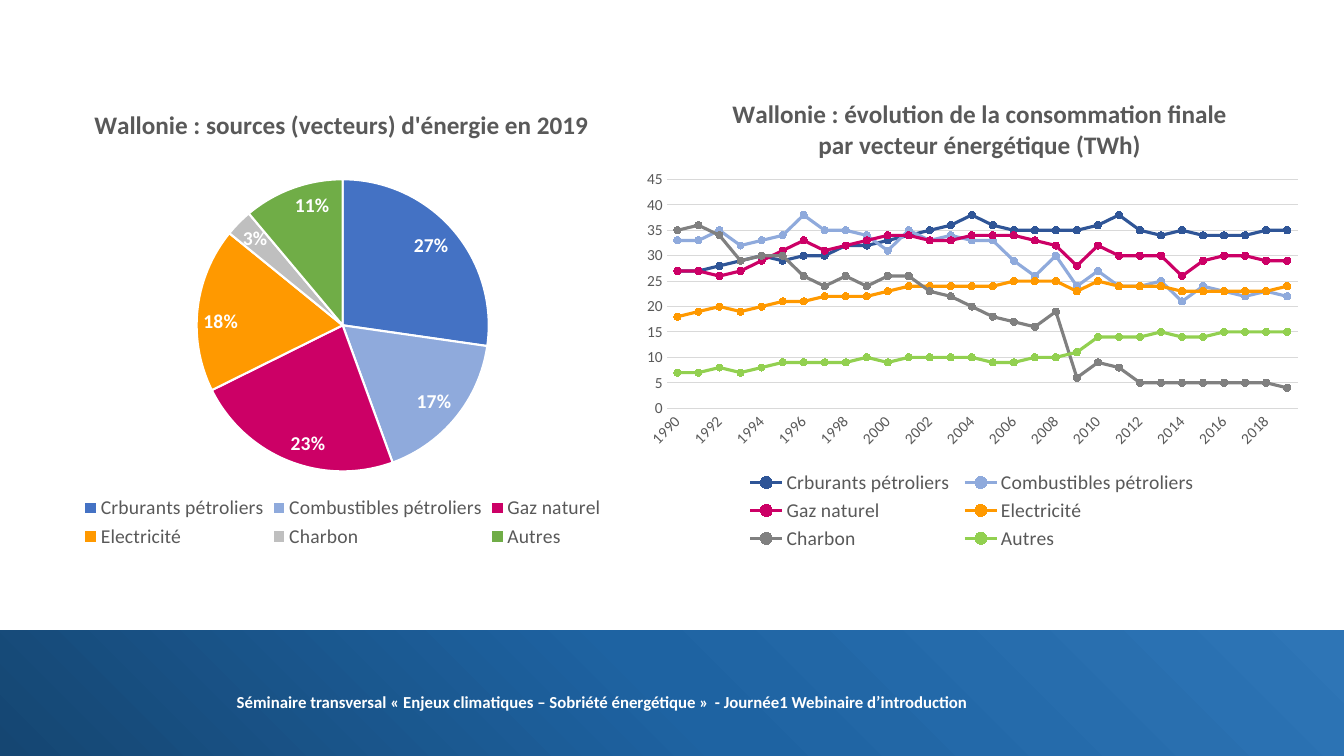
"""Build a slide on energy sources and final energy use in Wallonia."""
from copy import deepcopy
from dataclasses import dataclass
from typing import Any

from lxml.etree import SubElement as Sub, Element as Elem
from pptx import Presentation as Deck
from pptx.chart.data import CategoryChartData as Data
from pptx.dml.color import RGBColor as Rgb
from pptx.enum.chart import (XL_CHART_TYPE as Kind, XL_LABEL_POSITION as Spot,
                             XL_LEGEND_POSITION as Side, XL_MARKER_STYLE as Mark,
                             XL_TICK_MARK as Tick)
from pptx.enum.shapes import MSO_SHAPE as Form
from pptx.oxml.ns import qn
from pptx.util import Pt

Box = tuple[float, ...]


@dataclass(frozen=True)
class Theme:
    """Colours and type sizes of the slide."""
    font: str = "Calibri"
    black: str = "000000"
    white: str = "FFFFFF"
    grey: str = "595959"
    rule: str = "D9D9D9"
    band: tuple[str, ...] = ("154672", "1E63A2", "2E75B6")
    title: float = 18
    key: float = 14
    axis: float = 11
    base: float = 10
    foot: float = 12
    gap: float = 18


@dataclass(frozen=True)
class Source:
    """One energy source with its share, its colours and its yearly use."""
    name: str
    share: int
    slice: str
    line: str
    use: tuple[int, ...]


@dataclass(frozen=True)
class Panel:
    """One chart with its place and the layout of its parts."""
    kind: Any
    title: str
    box: Box
    head: Box
    plot: Box
    key: Box


THEME = Theme()
YEARS = [str(year) for year in range(1990, 2020)]
SOURCES = (
    Source("Crburants pétroliers", 27, "4472C4", "2F5597",
           (27, 27, 28, 29, 30, 29, 30, 30, 32, 32, 33, 34, 35, 36, 38,
            36, 35, 35, 35, 35, 36, 38, 35, 34, 35, 34, 34, 34, 35, 35)),
    Source("Combustibles pétroliers", 17, "8FAADC", "8FAADC",
           (33, 33, 35, 32, 33, 34, 38, 35, 35, 34, 31, 35, 33, 34, 33,
            33, 29, 26, 30, 24, 27, 24, 24, 25, 21, 24, 23, 22, 23, 22)),
    Source("Gaz naturel", 23, "CC0066", "CC0066",
           (27, 27, 26, 27, 29, 31, 33, 31, 32, 33, 34, 34, 33, 33, 34,
            34, 34, 33, 32, 28, 32, 30, 30, 30, 26, 29, 30, 30, 29, 29)),
    Source("Electricité", 18, "FF9900", "FF9900",
           (18, 19, 20, 19, 20, 21, 21, 22, 22, 22, 23, 24, 24, 24, 24,
            24, 25, 25, 25, 23, 25, 24, 24, 24, 23, 23, 23, 23, 23, 24)),
    Source("Charbon", 3, "BFBFBF", "808080",
           (35, 36, 34, 29, 30, 30, 26, 24, 26, 24, 26, 26, 23, 22, 20,
            18, 17, 16, 19, 6, 9, 8, 5, 5, 5, 5, 5, 5, 5, 4)),
    Source("Autres", 11, "70AD47", "92D050",
           (7, 7, 8, 7, 8, 9, 9, 9, 9, 10, 9, 10, 10, 10, 10,
            9, 9, 10, 10, 11, 14, 14, 14, 15, 14, 14, 15, 15, 15, 15)),
)
PIE = Panel(Kind.PIE, "Wallonie : sources (vecteurs) d'énergie en 2019",
            (-12.24, 56.16, 509, 339), (0.15, 0.05),
            (0.3, 0.21, 0.41, 0.62), (0.13, 0.87, 0.75, 0.13))
TREND = Panel(Kind.LINE_MARKERS,
              "Wallonie : évolution de la consommation finale par vecteur énergétique (TWh)",
              (452.16, 48.24, 484.5, 347.75), (0.14, 0.05),
              (0.05, 0.23, 0.93, 0.47), (0.16, 0.82, 0.68, 0.18))
FOOTER = (("Séminaire transversal « Enjeux climatiques – Sobriété énergétique »", THEME.foot),
          (" ", THEME.gap), ("- Journée1 Webinaire d’introduction", THEME.foot))


def style(item: Any, form: dict[str, Any]) -> None:
    """Set each attribute named in the format."""
    for name, value in form.items():
        setattr(item, name, value)


def write(font: Any, size: float, tint: str, bold: bool = False) -> None:
    """Give a font its face, size, weight and colour."""
    style(font, {"name": THEME.font, "size": Pt(size), "bold": bold})
    font.color.rgb = Rgb.from_string(tint)


def paint(fill: Any, tint: str) -> None:
    """Make a fill solid in one colour."""
    fill.solid()
    fill.fore_color.rgb = Rgb.from_string(tint)


def stroke(line: Any, tint: str, width: float) -> None:
    """Give a line its colour and width."""
    paint(line.fill, tint)
    line.width = Pt(width)


def place(part: Any, box: Box, inner: bool = False) -> None:
    """Fix a chart part at fractions of the chart area."""
    for old in part.findall(qn("c:layout")):
        part.remove(old)
    layout = Elem(qn("c:layout"))
    spot = Sub(layout, qn("c:manualLayout"))
    marks = [("layoutTarget", "inner")] if inner else []
    marks += [("xMode", "edge"), ("yMode", "edge")]
    marks += [(name, str(value)) for name, value in zip("xywh", box)]
    for name, value in marks:
        Sub(spot, qn("c:" + name)).set("val", value)
    over = part.find(qn("c:overlay"))
    if over is None:
        part.insert(0, layout)
    else:
        over.addprevious(layout)


def draw(slide: Any, panel: Panel, data: Data) -> Any:
    """Add a chart with its title and legend."""
    frame = slide.shapes.add_chart(panel.kind, *map(Pt, panel.box), data)
    chart = frame.chart
    style(chart, {"has_title": True, "has_legend": True})
    write(chart.font, THEME.base, THEME.black)
    text = chart.chart_title.text_frame
    text.text = panel.title
    write(text.paragraphs[0].runs[0].font, THEME.title, THEME.grey, True)
    style(chart.legend, {"position": Side.BOTTOM, "include_in_layout": False})
    write(chart.legend.font, THEME.key, THEME.grey)
    place(chart.chart_title._element, panel.head)
    place(chart.legend._element, panel.key)
    place(chart._chartSpace.find(".//" + qn("c:plotArea")), panel.plot, True)
    return chart


def add_pie(slide: Any) -> None:
    """Draw the shares of the sources."""
    data = Data()
    data.categories = [source.name for source in SOURCES]
    data.add_series("Series 1", [source.share for source in SOURCES])
    series = draw(slide, PIE, data).plots[0].series[0]
    for rank, source in enumerate(SOURCES):
        part = series.points[rank].format
        paint(part.fill, source.slice)
        stroke(part.line, THEME.white, 1.5)
    labels = series.data_labels
    style(labels, {"show_percentage": True, "show_value": False, "number_format": "0%",
                   "number_format_is_linked": False, "position": Spot.INSIDE_END})
    write(labels.font, THEME.key, THEME.white, True)


def add_trend(slide: Any) -> None:
    """Draw the yearly use of each source."""
    data = Data()
    data.categories = YEARS
    for source in SOURCES:
        data.add_series(source.name, source.use)
    chart = draw(slide, TREND, data)
    for source, series in zip(SOURCES, chart.plots[0].series):
        series.smooth = False
        stroke(series.format.line, source.line, 2.25)
        style(series.marker, {"style": Mark.CIRCLE, "size": 5})
        paint(series.marker.format.fill, source.line)
        stroke(series.marker.format.line, source.line, 0.75)
    years, scale = chart.category_axis, chart.value_axis
    for axis in (years, scale):
        style(axis, {"major_tick_mark": Tick.NONE, "minor_tick_mark": Tick.NONE})
        write(axis.tick_labels.font, THEME.axis, THEME.grey)
    years._element.find(".//" + qn("a:bodyPr")).set("rot", "-2700000")
    stroke(years.format.line, THEME.rule, 0.75)
    style(scale, {"minimum_scale": 0, "maximum_scale": 45, "major_unit": 5,
                  "has_major_gridlines": True})
    scale.format.line.fill.background()
    stroke(scale.major_gridlines.format.line, THEME.rule, 0.75)


def add_foot(slide: Any) -> None:
    """Draw the blue band and its line of text."""
    band = slide.shapes.add_shape(Form.RECTANGLE, *map(Pt, (0, 450, 960, 90)))
    band.shadow.inherit = False
    band.line.fill.background()
    band.fill.gradient()
    band.fill.gradient_angle = 45
    stops = band._element.find(".//" + qn("a:gsLst"))
    stops.insert(1, deepcopy(stops[0]))
    for rank, (stop, tint) in enumerate(zip(band.fill.gradient_stops, THEME.band)):
        stop.position = rank / 2
        stop.color.rgb = Rgb.from_string(tint)
    text = slide.shapes.add_textbox(*map(Pt, (162, 484.5, 630, 39.5))).text_frame
    text.word_wrap = True
    for words, size in FOOTER:
        run = text.paragraphs[0].add_run()
        run.text = words
        write(run.font, size, THEME.white, True)


def main() -> None:
    """Build and save the deck."""
    deck = Deck()
    style(deck, {"slide_width": Pt(960), "slide_height": Pt(540)})
    slide = deck.slides.add_slide(deck.slide_layouts[6])
    for step in (add_foot, add_pie, add_trend):
        step(slide)
    deck.save("out.pptx")


if __name__ == "__main__":
    main()
